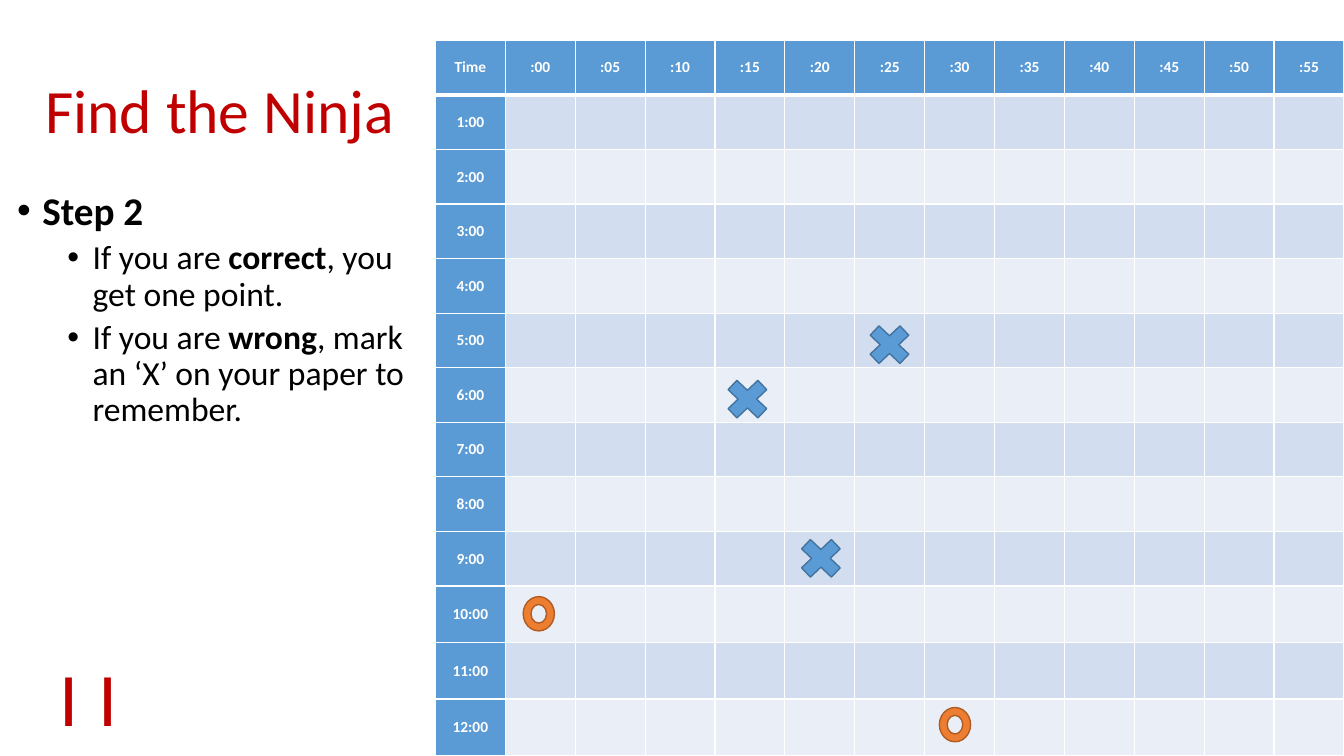
from pptx import Presentation
from pptx.dml.color import RGBColor as Rgb
from pptx.enum.shapes import MSO_SHAPE as Kind
from pptx.enum.text import MSO_ANCHOR as Anchor, MSO_AUTO_SIZE as Auto, PP_ALIGN as Align
from pptx.oxml import parse_xml
from pptx.oxml.ns import nsdecls
from pptx.util import Pt

TITLE = "Find the Ninja"
STEPS = [
    (0, [("Step 2", True)]),
    (1, [("If you are ", False), ("correct", True), (", you get one point.", False)]),
    (1, [("If you are ", False), ("wrong", True),
         (", mark an ‘X’ on your paper to remember.", False)]),
]
HEADS = ["Time"] + [f":{m:02}" for m in range(0, 60, 5)]
HOURS = [f"{h}:00" for h in range(1, 13)]
MARKS = [
    ("hit", 373.7, 426.2), ("miss", 513.4, 265.7), ("miss", 614.9, 226.8),
    ("miss", 565.9, 379.4), ("hit", 671, 505.4),
]
BARS = [("I", 5), ("I", 32.4)]

THEME = {
    "font": "Calibri", "title": 44, "step": (28, 24), "bar": 54, "cell": 11,
    "red": "C00000", "ink": "000000", "white": "FFFFFF",
    "head": "5B9BD5", "bands": ("D2DEEF", "EAEFF7"),
    "hit": ("ED7D31", "AF5C24"), "miss": ("5B9BD5", "43739E"),
}
LOOKS = {"hit": (Kind.DONUT, 22.3, 24.5), "miss": (Kind.MATH_MULTIPLY, 41, 38.9)}
LEVELS = [(18, 10), (54, 5)]


def put(item, form):
    for key, val in form.items():
        setattr(item, key, val)


def place(item, left, top, width, height):
    put(item, dict(left=Pt(left), top=Pt(top), width=Pt(width), height=Pt(height)))


def write(para, text, size, tint, bold=False):
    run = para.add_run()
    run.text = text
    put(run.font, dict(name=THEME["font"], size=Pt(size), bold=bold))
    run.font.color.rgb = Rgb.from_string(THEME[tint])


def paint(fill, tint):
    fill.solid()
    fill.fore_color.rgb = Rgb.from_string(tint)


def edge(cell, base):
    props = cell._tc.get_or_add_tcPr()
    sides = [("L", 1), ("R", 1), ("T", 1), ("B", base)]
    for spot, (side, wide) in enumerate(sides):
        props.insert(spot, parse_xml(
            f'<a:ln{side} {nsdecls("a")} w="{Pt(wide)}"><a:solidFill>'
            f'<a:srgbClr val="{THEME["white"]}"/></a:solidFill></a:ln{side}>'))


def add_title(slide):
    title = slide.shapes.title
    place(title, 2.9, 28.8, 308.2, 104.4)
    frame = title.text_frame
    put(frame, dict(auto_size=Auto.NONE, word_wrap=True, vertical_anchor=Anchor.MIDDLE))
    para = frame.paragraphs[0]
    put(para, dict(alignment=Align.CENTER, line_spacing=0.9))
    write(para, TITLE, THEME["title"], "red")


def add_steps(slide):
    body = slide.placeholders[1]
    place(body, 5, 133.2, 314.6, 342.7)
    frame = body.text_frame
    put(frame, dict(auto_size=Auto.NONE, word_wrap=True))
    for spot, (level, runs) in enumerate(STEPS):
        para = frame.add_paragraph() if spot else frame.paragraphs[0]
        left, gap = LEVELS[level]
        put(para, dict(level=level, line_spacing=0.9, space_before=Pt(gap)))
        props = para._p.get_or_add_pPr()
        props.set("marL", str(Pt(left)))
        props.set("indent", str(Pt(-18)))
        props.append(parse_xml(f'<a:buFont {nsdecls("a")} typeface="Arial"/>'))
        props.append(parse_xml(f'<a:buChar {nsdecls("a")} char="•"/>'))
        for text, bold in runs:
            write(para, text, THEME["step"][level], "ink", bold)


def add_grid(slide):
    rows = [HEADS] + [[hour] + [""] * (len(HEADS) - 1) for hour in HOURS]
    grid = slide.shapes.add_table(
        len(rows), len(HEADS), Pt(311.04), Pt(28.8), Pt(648.96), Pt(511.2)).table
    grid.first_col = True
    for col in grid.columns:
        col.width = Pt(49.92)
    for r, row in enumerate(rows):
        grid.rows[r].height = Pt(39 if r < 10 else 40.4)
        for c, text in enumerate(row):
            cell = grid.cell(r, c)
            lead = r == 0 or c == 0
            paint(cell.fill, THEME["head"] if lead else THEME["bands"][(r - 1) % 2])
            edge(cell, 1 if r else 3)
            if text:
                put(cell, dict(vertical_anchor=Anchor.MIDDLE, margin_left=Pt(4.3),
                               margin_right=Pt(4.3), margin_top=0, margin_bottom=0))
                para = cell.text_frame.paragraphs[0]
                para.alignment = Align.CENTER
                write(para, text, THEME["cell"], "white", True)


def add_marks(slide):
    for look, left, top in MARKS:
        kind, width, height = LOOKS[look]
        mark = slide.shapes.add_shape(kind, Pt(left), Pt(top), Pt(width), Pt(height))
        mark.shadow.inherit = False
        tint, rim = THEME[look]
        paint(mark.fill, tint)
        paint(mark.line.fill, rim)
        mark.line.width = Pt(1)


def add_bars(slide):
    for text, left in BARS:
        box = slide.shapes.add_textbox(Pt(left), Pt(468.7), Pt(89.3), Pt(71.3))
        box.text_frame.word_wrap = True
        para = box.text_frame.paragraphs[0]
        put(para, dict(alignment=Align.CENTER, line_spacing=0.9, space_before=Pt(10)))
        write(para, text, THEME["bar"], "red")


def main():
    deck = Presentation()
    put(deck, dict(slide_width=Pt(960), slide_height=Pt(540)))
    slide = deck.slides.add_slide(deck.slide_layouts[1])
    for step in (add_title, add_steps, add_grid, add_marks, add_bars):
        step(slide)
    deck.save("out.pptx")


if __name__ == "__main__":
    main()
